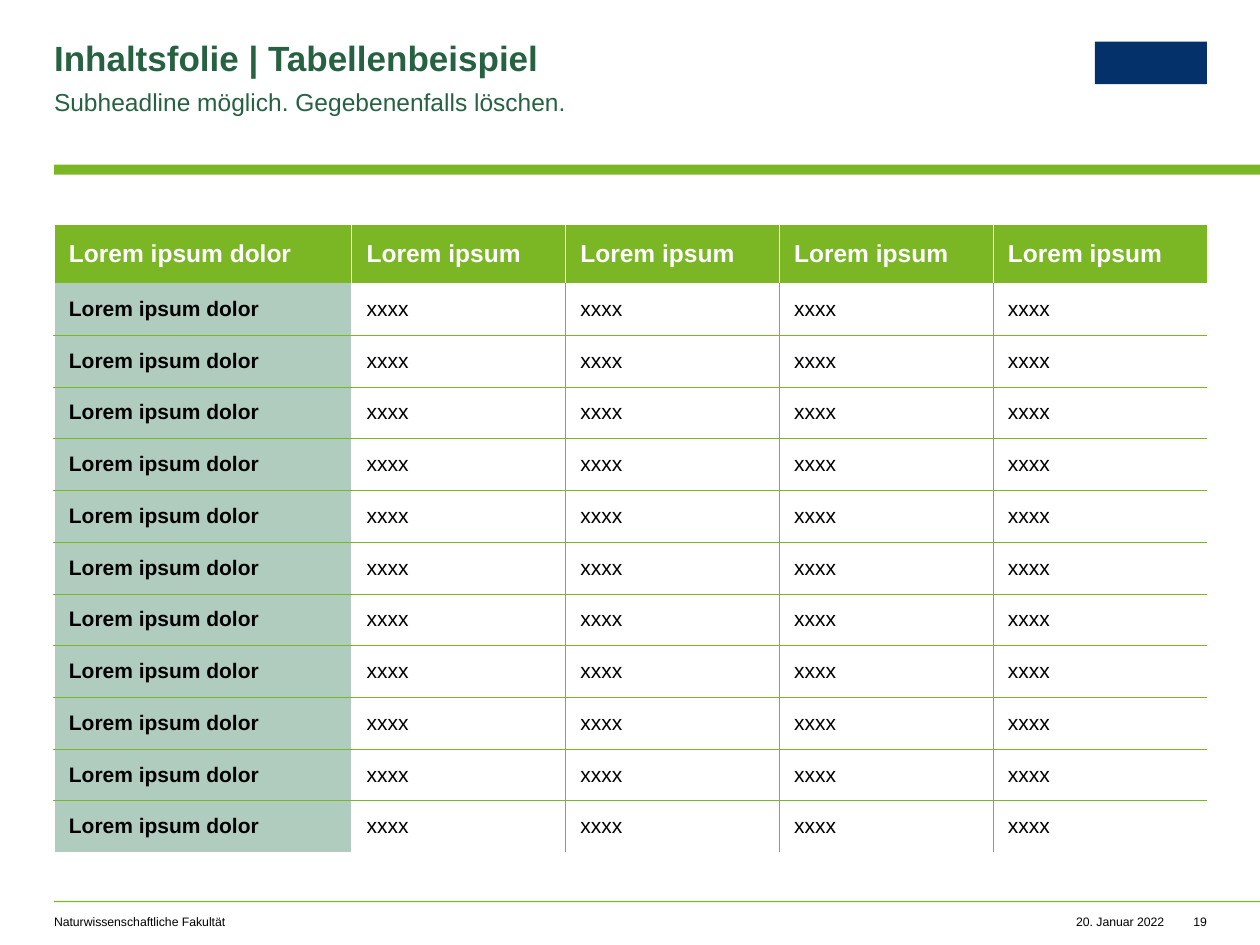
from dataclasses import dataclass

from lxml.etree import SubElement
from pptx import Presentation
from pptx.dml.color import RGBColor as Color
from pptx.enum.shapes import MSO_SHAPE as Shape
from pptx.enum.text import MSO_ANCHOR as Anchor, MSO_AUTO_SIZE as AutoSize, PP_ALIGN as Align
from pptx.oxml.ns import qn
from pptx.util import Cm, Pt


@dataclass(frozen=True)
class Theme:
    """Colours, font and type sizes of the slide."""

    green: str = "7BB725"
    dark_green: str = "266141"
    pale_green: str = "B0CCBF"
    navy: str = "04316A"
    white: str = "FFFFFF"
    black: str = "000000"
    font: str = "Arial"
    title: int = 20
    heading: int = 14
    body: int = 12
    footer: int = 7


THEME = Theme()
PAGE_WIDTH, PAGE_HEIGHT = 25.4, 19.05
LEFT, CONTENT_WIDTH = 1.09, 23.24
RIGHT = LEFT + CONTENT_WIDTH
TABLE_TOP, TABLE_HEIGHT = 4.52, 12.67
HEADER_HEIGHT, LABEL_WIDTH = 1.19, 6
HEADINGS = ["Lorem ipsum dolor"] + ["Lorem ipsum"] * 4
BODY_ROWS = [["Lorem ipsum dolor"] + ["xxxx"] * 4 for _ in range(11)]


def format_text(frame, text, size, color, bold=False, align=Align.LEFT):
    """Fill a text frame with one formatted paragraph and return the paragraph."""
    frame.text = text
    para = frame.paragraphs[0]
    para.alignment = align
    for span in para.runs:
        font = span.font
        font.name, font.size, font.bold = THEME.font, Pt(size), bold
        font.color.rgb = Color.from_string(color)
    return para


def place(box, left, top, width, height):
    """Move and size a text shape, and remove its insets."""
    box.left, box.top, box.width, box.height = map(Cm, (left, top, width, height))
    frame = box.text_frame
    frame.margin_left = frame.margin_right = frame.margin_top = frame.margin_bottom = 0
    frame.word_wrap, frame.auto_size = True, AutoSize.NONE
    frame.vertical_anchor = Anchor.TOP
    return frame


def add_text(page, left, top, width, height, *text, **style):
    """Add a text box and return its paragraph."""
    box = page.shapes.add_textbox(0, 0, 0, 0)
    return format_text(place(box, left, top, width, height), *text, **style)


def add_block(page, left, top, width, height, color):
    """Add a plain filled rectangle."""
    block = page.shapes.add_shape(Shape.RECTANGLE, *map(Cm, (left, top, width, height)))
    block.shadow.inherit = False
    block.fill.solid()
    block.fill.fore_color.rgb = Color.from_string(color)
    block.line.fill.background()


def set_borders(cell, **edges):
    """Draw the given (colour, points) edges of a cell and hide the others."""
    properties = cell._tc.get_or_add_tcPr()
    for side in "LRTB":
        line = SubElement(properties, qn(f"a:ln{side}"))
        if edges.get(side):
            color, points = edges[side]
            line.set("w", str(Pt(points)))
            fill = SubElement(line, qn("a:solidFill"))
            SubElement(fill, qn("a:srgbClr")).set("val", color)
        else:
            SubElement(line, qn("a:noFill"))


def cell_borders(row, column, last_row, last_column):
    """Return the edges of a cell from its position in the table."""
    grid, outline, divider = (THEME.green, 0.25), (THEME.white, 1), (THEME.white, 0.5)
    inner = divider if row == 0 else grid
    left = right = inner
    if column == 0:
        left, right = outline, divider if row == 0 else outline
    elif column == 1 and row > 0:
        left = outline
    elif column == last_column:
        right = None
    top = outline if row == 0 else grid if row > 1 else None
    bottom = grid if 0 < row < last_row else None
    return {"L": left, "R": right, "T": top, "B": bottom}


def fill_cell(cell, text, row, column):
    """Write and colour a cell as heading, row label or value."""
    cell.vertical_anchor = Anchor.MIDDLE
    cell.margin_left = cell.margin_right = Cm(0.3)
    cell.margin_top = cell.margin_bottom = Cm(0.1)
    is_heading, is_label = row == 0, column == 0
    size = THEME.heading if is_heading else THEME.body
    color = THEME.white if is_heading else THEME.black
    format_text(cell.text_frame, text, size, color, bold=is_heading or is_label)
    if is_heading or is_label:
        cell.fill.solid()
        cell.fill.fore_color.rgb = Color.from_string(THEME.green if is_heading else THEME.pale_green)
    else:
        cell.fill.background()


def add_grid(page, rows):
    """Add the table with a heading row and a label column."""
    last_row, last_column = len(rows) - 1, len(rows[0]) - 1
    area = map(Cm, (LEFT, TABLE_TOP, CONTENT_WIDTH, TABLE_HEIGHT))
    table = page.shapes.add_table(len(rows), len(rows[0]), *area).table
    table.first_row = table.horz_banding = False
    for index, column in enumerate(table.columns):
        column.width = Cm((CONTENT_WIDTH - LABEL_WIDTH) / last_column if index else LABEL_WIDTH)
    for index, row in enumerate(table.rows):
        row.height = Cm((TABLE_HEIGHT - HEADER_HEIGHT) / last_row if index else HEADER_HEIGHT)
    for row, texts in enumerate(rows):
        for column, text in enumerate(texts):
            cell = table.cell(row, column)
            set_borders(cell, **cell_borders(row, column, last_row, last_column))
            fill_cell(cell, text, row, column)


def add_header(page):
    """Set the title, the subheadline, the emblem block and the green bar."""
    frame = place(page.shapes.title, LEFT, 0.84, 14.25, 0.76)
    title = format_text(frame, "Inhaltsfolie | Tabellenbeispiel", THEME.title, THEME.dark_green, bold=True)
    title.line_spacing = 0.9
    subheadline = add_text(page, LEFT, 1.7, 14.25, 0.61, "Subheadline möglich. Gegebenenfalls löschen.",
                           THEME.heading, THEME.dark_green)
    subheadline.line_spacing = 1.1
    subheadline.space_after = Pt(8)
    add_block(page, RIGHT - 2.26, 0.84, 2.26, 0.86, THEME.navy)
    add_block(page, LEFT, 3.32, PAGE_WIDTH - LEFT, 0.2, THEME.green)


def add_footer(page):
    """Add the footer rule with faculty, date and page number."""
    add_block(page, LEFT, 18.16, PAGE_WIDTH - LEFT, 0.03, THEME.green)
    for left, width, text, align in (
        (LEFT, 11.4, "Naturwissenschaftliche Fakultät", Align.LEFT),
        (21.47, 2, "20. Januar 2022", Align.RIGHT),
        (RIGHT - 0.5, 0.5, "19", Align.RIGHT),
    ):
        add_text(page, left, 18.44, width, 0.3, text, THEME.footer, THEME.black, align=align)


def main():
    """Build the slide and save the deck."""
    deck = Presentation()
    deck.slide_width, deck.slide_height = Cm(PAGE_WIDTH), Cm(PAGE_HEIGHT)
    page = deck.slides.add_slide(deck.slide_layouts[5])
    add_header(page)
    add_grid(page, [HEADINGS] + BODY_ROWS)
    add_footer(page)
    deck.save("out.pptx")


if __name__ == "__main__":
    main()
